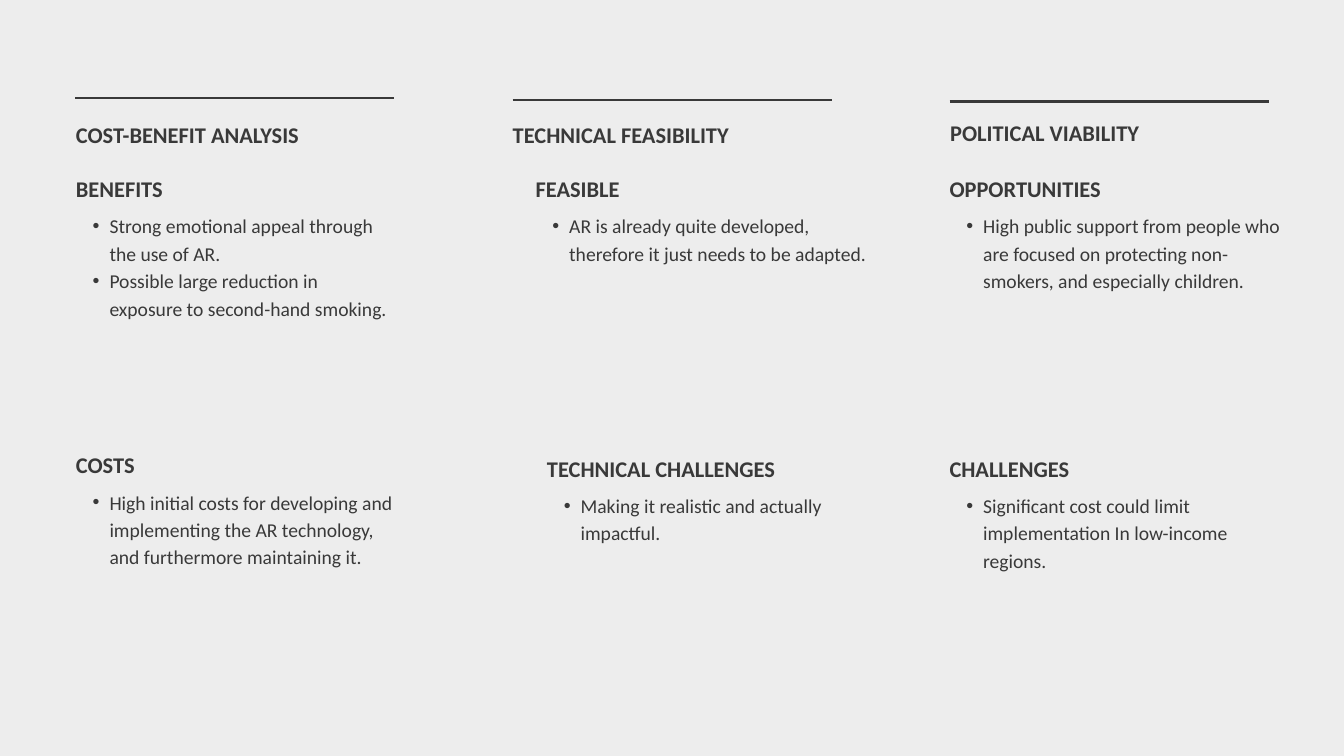
"""Build a slide comparing costs, technical feasibility and political viability."""
from lxml import etree
from pptx import Presentation
from pptx.dml.color import RGBColor
from pptx.enum.shapes import MSO_CONNECTOR
from pptx.enum.text import MSO_AUTO_SIZE
from pptx.oxml.ns import qn
from pptx.util import Inches, Pt

BACKGROUND = RGBColor(0xED, 0xED, 0xED)
INK = RGBColor(0x39, 0x39, 0x39)
FONT = "Calibri"
COLUMN_WIDTH = 4.74
HEADING_HEIGHT = 0.4
BODY_OFFSET = 0.52

RULES = [(1.12, 1.46), (7.63, 1.49), (14.13, 1.51)]
HEADINGS = [
    (1.13, 1.8, COLUMN_WIDTH, "COST-BENEFIT ANALYSIS"),
    (7.63, 1.8, 5.42, "TECHNICAL FEASIBILITY"),
    (14.14, 1.78, COLUMN_WIDTH, "POLITICAL VIABILITY"),
]
SECTIONS = [
    (1.13, 2.61, COLUMN_WIDTH, 2.02, "BENEFITS", [
        "Strong emotional appeal through the use of AR.",
        "Possible large reduction in exposure to second-hand smoking."]),
    (1.13, 6.72, COLUMN_WIDTH, 1.61, "COSTS", [
        "High initial costs for developing and implementing the AR technology, "
        "and furthermore maintaining it."]),
    (7.97, 2.61, 5.08, 1.21, "FEASIBLE", [
        "AR is already quite developed, therefore it just needs to be adapted."]),
    (8.14, 6.77, COLUMN_WIDTH, 0.8, "TECHNICAL CHALLENGES", [
        "Making it realistic and actually impactful."]),
    (14.13, 2.61, 5.08, 1.61, "OPPORTUNITIES", [
        "High public support from people who are focused on protecting "
        "non-smokers, and especially children."]),
    (14.13, 6.77, COLUMN_WIDTH, 1.21, "CHALLENGES", [
        "Significant cost could limit implementation In low-income regions."]),
]


def add_bullet(paragraph):
    paragraph.level = 1
    properties = paragraph._p.get_or_add_pPr()
    properties.set("marL", str(Inches(0.5)))
    properties.set("indent", str(Inches(-0.25)))
    etree.SubElement(properties, qn("a:buFont")).set("typeface", "Arial")
    etree.SubElement(properties, qn("a:buChar")).set("char", "•")


def add_text(left, top, width, height, lines, bulleted=False):
    box = slide.shapes.add_textbox(Inches(left), Inches(top), Inches(width), Inches(height))
    frame = box.text_frame
    frame.word_wrap = True
    frame.auto_size = MSO_AUTO_SIZE.SHAPE_TO_FIT_TEXT
    frame.margin_left = frame.margin_right = frame.margin_top = frame.margin_bottom = 0
    for index, line in enumerate(lines):
        paragraph = frame.add_paragraph() if index else frame.paragraphs[0]
        paragraph.line_spacing = Pt(29.4 if bulleted else 28.8)
        if bulleted:
            add_bullet(paragraph)
        run = paragraph.add_run()
        run.text = line
        run.font.name = FONT
        run.font.size = Pt(21 if bulleted else 24)
        run.font.bold = not bulleted
        run.font.color.rgb = INK


presentation = Presentation()
presentation.slide_width = Inches(20)
presentation.slide_height = Inches(11.25)
slide = presentation.slides.add_slide(presentation.slide_layouts[6])
slide.background.fill.solid()
slide.background.fill.fore_color.rgb = BACKGROUND

for left, top in RULES:
    rule = slide.shapes.add_connector(
        MSO_CONNECTOR.STRAIGHT, Inches(left), Inches(top), Inches(left + 4.75), Inches(top))
    rule.line.color.rgb = INK
    rule.line.width = Pt(2.25)
    etree.SubElement(rule._element.spPr, qn("a:effectLst"))

for left, top, width, heading in HEADINGS:
    add_text(left, top, width, HEADING_HEIGHT, [heading])

for left, top, width, height, heading, points in SECTIONS:
    add_text(left, top, width, HEADING_HEIGHT, [heading])
    add_text(left, top + BODY_OFFSET, width, height, points, bulleted=True)

presentation.save("out.pptx")
